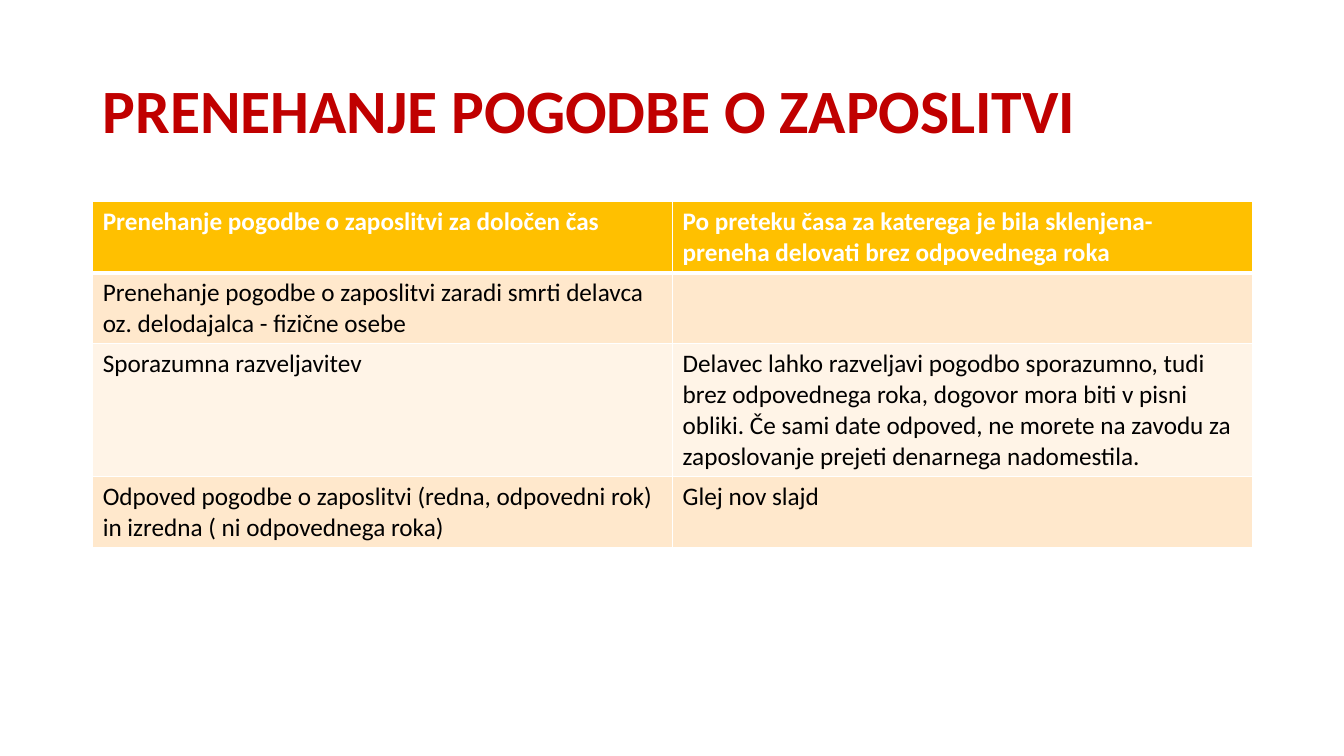
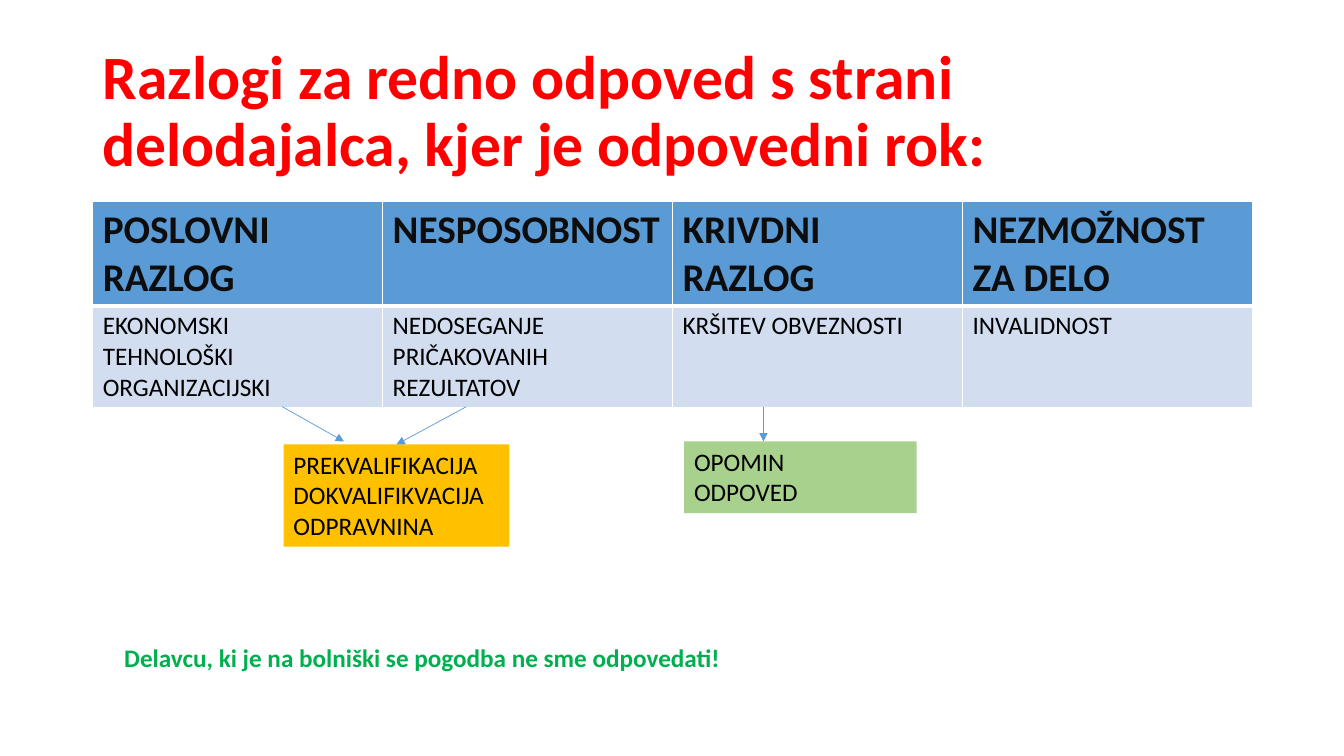
from lxml import etree
from pptx import Presentation
from pptx.dml.color import RGBColor
from pptx.enum.shapes import MSO_CONNECTOR, MSO_SHAPE
from pptx.enum.text import MSO_ANCHOR, PP_ALIGN
from pptx.oxml import parse_xml
from pptx.oxml.ns import nsdecls, qn
from pptx.util import Inches, Pt

RECT = MSO_SHAPE.RECTANGLE
LINE = MSO_CONNECTOR.STRAIGHT
TOP, MID = MSO_ANCHOR.TOP, MSO_ANCHOR.MIDDLE
LEFT = PP_ALIGN.LEFT

FONT = "Calibri"
WHITE = RGBColor(0xFF, 0xFF, 0xFF)
BLACK = RGBColor(0x00, 0x00, 0x00)
INK = RGBColor(0x0D, 0x0D, 0x0D)
MAROON = RGBColor(0xC0, 0x00, 0x00)
RED = RGBColor(0xFF, 0x00, 0x00)
GOLD = RGBColor(0xFF, 0xC0, 0x00)
PEACH = RGBColor(0xFF, 0xE8, 0xCC)
CREAM = RGBColor(0xFF, 0xF4, 0xE7)
BLUE = RGBColor(0x5B, 0x9B, 0xD5)
PALE = RGBColor(0xD2, 0xDE, 0xEF)
LIME = RGBColor(0xA9, 0xD1, 0x8E)
GREEN = RGBColor(0x00, 0xB0, 0x50)

# X and Y are one percent of the slide's width and height
WIDE, TALL = Inches(13.33), Inches(7.5)
X, Y = WIDE / 100, TALL / 100
EDGE, SPAN = int(6.9 * X), int(86.3 * X)
HEAD = int(26.67 * Y)


def write(frame, text, size, color, bold=False, anchor=TOP, space=None):
    """Fill a text frame, one paragraph per line of text."""
    frame.word_wrap = True
    frame.vertical_anchor = anchor
    for i, words in enumerate(text.split("\n")):
        para = frame.add_paragraph() if i else frame.paragraphs[0]
        para.alignment = LEFT
        para.line_spacing = space
        run = para.add_run()
        run.text = words
        font = run.font
        font.name, font.size, font.bold = FONT, Pt(size), bold
        font.color.rgb = color


def grid(slide, rows, high, fills, size, color):
    """Add a table with a bold first row and white rules."""
    count = len(rows[0])
    table = slide.shapes.add_table(
        len(rows), count, EDGE, HEAD, SPAN, int(sum(high) * Y)).table
    for col in table.columns:
        col.width = SPAN // count
    for r, row in enumerate(rows):
        table.rows[r].height = int(high[r] * Y)
        for c, text in enumerate(row):
            cell = table.cell(r, c)
            cell.fill.solid()
            cell.fill.fore_color.rgb = fills[r]
            if r == 0:
                write(cell.text_frame, text, size, color, True)
            elif text:
                write(cell.text_frame, text, 18, BLACK)
            # A thick rule parts the first row from the rest
            rules = {"L": 1, "R": 1, "T": 3 if r == 1 else 1, "B": 1 if r else 3}
            for i, (side, width) in enumerate(rules.items()):
                rule = parse_xml(
                    f'<a:ln{side} {nsdecls("a")} w="{Pt(width)}"><a:solidFill>'
                    f'<a:srgbClr val="{WHITE}"/></a:solidFill></a:ln{side}>')
                cell._tc.get_or_add_tcPr().insert(i, rule)


deck = Presentation()
deck.slide_width, deck.slide_height = WIDE, TALL

# Slides and their titles
slides = []
for text, color in [
    ("PRENEHANJE POGODBE O ZAPOSLITVI", MAROON),
    ("Razlogi za redno odpoved s strani delodajalca, kjer je odpovedni rok:", RED),
]:
    slide = deck.slides.add_slide(deck.slide_layouts[6])
    box = slide.shapes.add_textbox(EDGE, int(5.3 * Y), SPAN, int(19.3 * Y))
    write(box.text_frame, text, 44, color, True, MID, 0.9)
    slides.append(slide)
first, last = slides

# Slide 1: ways a contract ends
ways = [
    ("Prenehanje pogodbe o zaposlitvi za določen čas",
     "Po preteku časa za katerega je bila sklenjena- preneha delovati brez "
     "odpovednega roka"),
    ("Prenehanje pogodbe o zaposlitvi zaradi smrti delavca oz. delodajalca "
     "- fizične osebe", ""),
    ("Sporazumna razveljavitev",
     "Delavec lahko razveljavi pogodbo sporazumno, tudi brez odpovednega roka, "
     "dogovor mora biti v pisni obliki. Če sami date odpoved, ne morete na "
     "zavodu za zaposlovanje prejeti denarnega nadomestila."),
    ("Odpoved pogodbe o zaposlitvi (redna, odpovedni rok) in izredna "
     "( ni odpovednega roka)", "Glej nov slajd"),
]
grid(first, ways, [9.4, 9.4, 17.6, 9.4], [GOLD, PEACH, CREAM, PEACH], 18, WHITE)

# Slide 2: grounds for notice
grounds = [
    ("POSLOVNI RAZLOG", "NESPOSOBNOST", "KRIVDNI RAZLOG", "NEZMOŽNOST ZA DELO"),
    ("EKONOMSKI\nTEHNOLOŠKI\nORGANIZACIJSKI", "NEDOSEGANJE PRIČAKOVANIH REZULTATOV",
     "KRŠITEV OBVEZNOSTI", "INVALIDNOST"),
]
grid(last, grounds, [13.7, 13.5], [BLUE, PALE], 28, INK)

# Outcome boxes
for x, y, w, h, fill, text in [
    (21.1, 58.8, 16.8, 13.5, GOLD, "PREKVALIFIKACIJA\nDOKVALIFIKVACIJA\nODPRAVNINA"),
    (50.9, 58.4, 17.3, 9.5, LIME, "OPOMIN\nODPOVED"),
]:
    box = last.shapes.add_shape(RECT, int(x * X), int(y * Y), int(w * X), int(h * Y))
    box.shadow.inherit = False
    box.fill.solid()
    box.fill.fore_color.rgb = fill
    box.line.fill.background()
    write(box.text_frame, text, 18, BLACK)

# Arrows from the table down to the boxes
for start, end, foot in [(21, 25.6, 58.4), (34.7, 29.5, 58.8), (56.8, 56.8, 58.4)]:
    arrow = last.shapes.add_connector(
        LINE, int(start * X), int(53.8 * Y), int(end * X), int(foot * Y))
    arrow.line.color.rgb = BLUE
    arrow.line.width = Pt(0.5)
    etree.SubElement(arrow.line._get_or_add_ln(), qn("a:tailEnd"), type="triangle")
    etree.SubElement(arrow._element.spPr, qn("a:effectLst"))

# Closing note
note = last.shapes.add_textbox(
    int(8.5 * X), int(84.3 * Y), int(61.1 * X), int(5.3 * Y))
write(note.text_frame, "Delavcu, ki je na bolniški se pogodba ne sme odpovedati!",
      18, GREEN, True)

deck.save("out.pptx")
